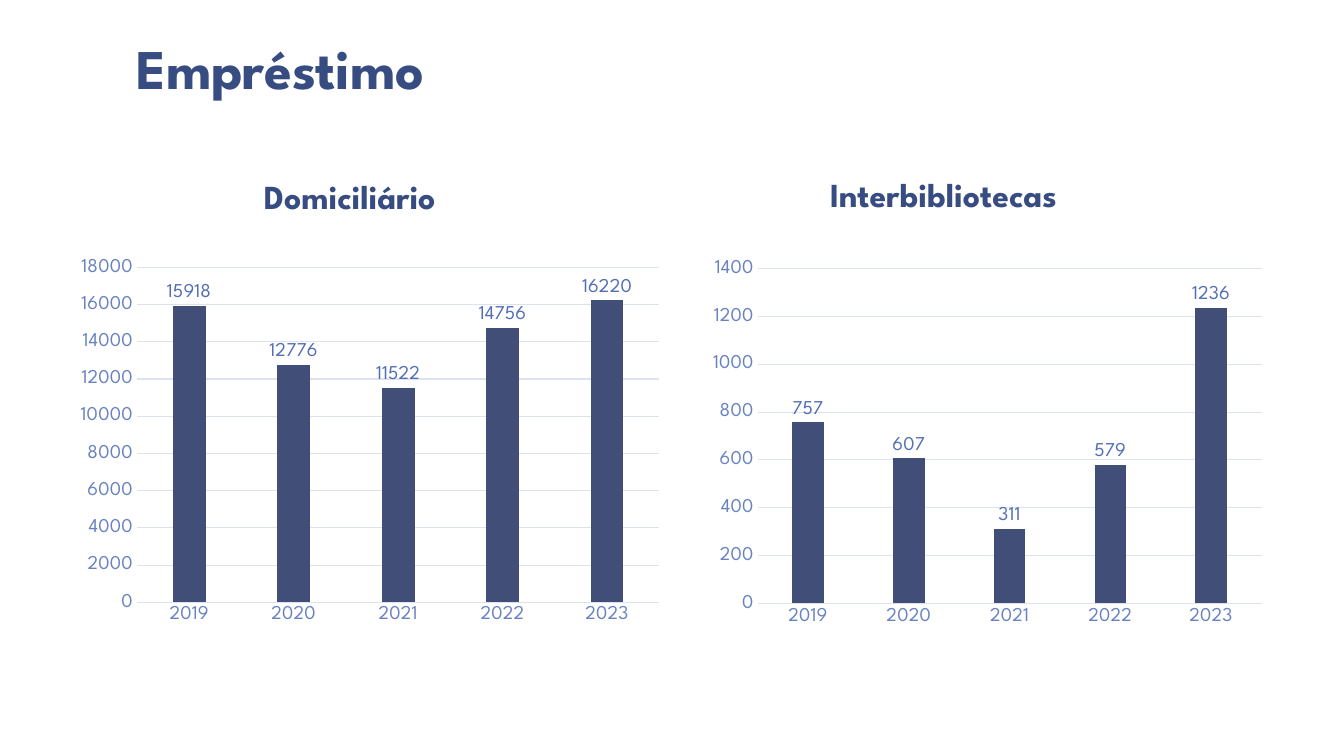
from pptx import Presentation
from pptx.chart.data import CategoryChartData
from pptx.dml.color import RGBColor
from pptx.enum.chart import XL_CHART_TYPE, XL_LABEL_POSITION, XL_TICK_MARK
from pptx.enum.text import MSO_ANCHOR, PP_ALIGN
from pptx.util import Cm, Pt

COLUMN = XL_CHART_TYPE.COLUMN_CLUSTERED
OUTSIDE = XL_LABEL_POSITION.OUTSIDE_END
NO_TICK = XL_TICK_MARK.NONE
BOTTOM = MSO_ANCHOR.BOTTOM
LEFT, CENTER = PP_ALIGN.LEFT, PP_ALIGN.CENTER

# Content
FACE = "League Spartan"
NAVY, BAR, AXIS, LABEL, GRID = "374C81", "414E77", "6A83C0", "546FB6", "DDE2F0"
TITLE = "Empréstimo"
YEARS = ["2019", "2020", "2021", "2022", "2023"]
# heading, its left and top, chart box, values, axis top, axis step
LOANS = [
    ("Domiciliário", (2.72, 4.32), (1.73, 6.32, 15.19, 9.6),
     (15918, 12776, 11522, 14756, 16220), 18000, 2000),
    ("Interbibliotecas", (17.68, 4.27), (17.68, 6.35, 14.4, 9.6),
     (757, 607, 311, 579, 1236), 1400, 200),
]


def color(code):
    return RGBColor.from_string(code)


def style(font, size, code, bold=False):
    font.name, font.size, font.bold = FACE, Pt(size), bold
    font.color.rgb = color(code)


def write(frame, text, size, align):
    frame.word_wrap = True
    frame.text = text
    para = frame.paragraphs[0]
    para.alignment = align
    style(para.runs[0].font, size, NAVY, True)
    return para


def rule(line):
    line.color.rgb = color(GRID)
    line.width = Pt(0.75)


def add_bars(slide, box, values, top, step):
    data = CategoryChartData()
    data.categories = YEARS
    data.add_series("Series 1", values)
    chart = slide.shapes.add_chart(COLUMN, *map(Cm, box), data).chart
    chart.has_title = chart.has_legend = False
    style(chart.font, 14, NAVY)

    # Axes
    years, scale = chart.category_axis, chart.value_axis
    for axis in (years, scale):
        axis.major_tick_mark = axis.minor_tick_mark = NO_TICK
        style(axis.tick_labels.font, 14, AXIS)
    rule(years.format.line)
    scale.format.line.fill.background()
    scale.minimum_scale, scale.maximum_scale = 0, top
    scale.major_unit = step
    scale.has_major_gridlines = True
    rule(scale.major_gridlines.format.line)

    # Bars and their labels
    plot = chart.plots[0]
    plot.vary_by_categories = False
    plot.gap_width, plot.overlap = 219, -27
    fill = plot.series[0].format.fill
    fill.solid()
    fill.fore_color.rgb = color(BAR)
    plot.has_data_labels = True
    labels = plot.data_labels
    labels.show_value = True
    labels.position = OUTSIDE
    style(labels.font, 14, LABEL)


deck = Presentation()
deck.slide_width, deck.slide_height = Cm(33.87), Cm(19.05)
slide = deck.slides.add_slide(deck.slide_layouts[5])
slide.background.fill.solid()
slide.background.fill.fore_color.rgb = color("FFFFFF")

# Title
title = slide.shapes.title
title.left, title.top, title.width, title.height = map(Cm, (3.1, 0.2, 28.22, 3.89))
frame = title.text_frame
frame.vertical_anchor = BOTTOM
frame.margin_left = frame.margin_right = Cm(0.33)
frame.margin_bottom = Cm(1.55)
write(frame, TITLE, 40, LEFT).line_spacing = 0.85

# Charts with their headings
for name, spot, box, values, top, step in LOANS:
    add_bars(slide, box, values, top, step)
    head = slide.shapes.add_textbox(*map(Cm, (*spot, 12.19, 1.27)))
    write(head.text_frame, name, 24, CENTER)

deck.save("out.pptx")
